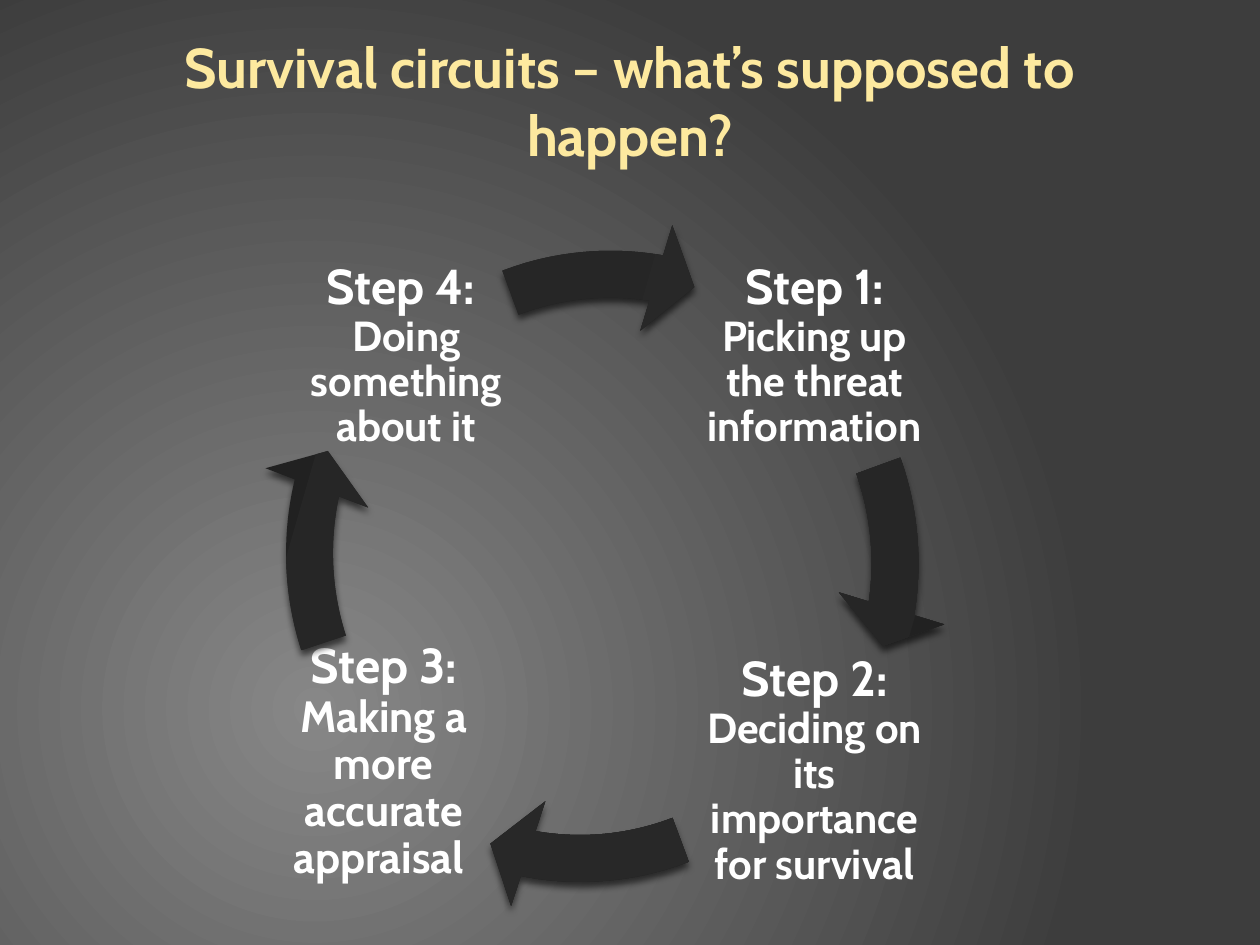
from lxml import etree
from pptx import Presentation
from pptx.dml.color import RGBColor
from pptx.enum.shapes import MSO_SHAPE as Shape
from pptx.enum.text import MSO_ANCHOR as Anchor, PP_ALIGN as Align
from pptx.oxml import parse_xml
from pptx.oxml.ns import nsdecls, qn
from pptx.util import Inches, Pt

ARROW_STOPS = [(0, "212121"), (30, "262626"), (45, "282828"),
               (55, "282828"), (73, "262626"), (100, "212121")]
SHADOW = (f'<a:outerShdw {nsdecls("a")} blurRad="{Pt(4)}" dist="{Pt(3)}" dir="5400000" '
          'rotWithShape="0"><a:srgbClr val="000000"><a:alpha val="58000"/></a:srgbClr></a:outerShdw>')


def set_gradient(fill, owner, stops, direction):
    """Fill with the (percent, colour) stops; direction is the a:lin or a:path markup."""
    fill.gradient()
    old = next(owner.iter(qn("a:gradFill")))
    marks = "".join(f'<a:gs pos="{percent * 1000}"><a:srgbClr val="{color}"/></a:gs>'
                    for percent, color in stops)
    new = parse_xml(f'<a:gradFill {nsdecls("a")} rotWithShape="1"><a:gsLst>{marks}</a:gsLst>'
                    f'{direction}</a:gradFill>')
    old.getparent().replace(old, new)


def set_font(font, size, color):
    font.name, font.size, font.bold = "Cabin", Pt(size), True
    font.color.rgb = RGBColor.from_string(color)


deck = Presentation()
deck.slide_width, deck.slide_height = Inches(10), Inches(7.5)
page = deck.slides.add_slide(deck.slide_layouts[5])
set_gradient(page.background.fill, page.element, [(0, "878787"), (100, "3D3D3D")],
             '<a:path path="circle"><a:fillToRect l="50000" t="100000" r="100000" b="50000"/></a:path>')

title = page.shapes.title
title.left, title.top, title.width, title.height = map(Inches, (0.75, 0.17, 8.5, 1.25))
frame = title.text_frame
frame.margin_left = frame.margin_right = 0
frame.margin_top = frame.margin_bottom = Inches(0.05)
frame.vertical_anchor = Anchor.MIDDLE
frame.text = "Survival circuits – what’s supposed to happen?"
frame.paragraphs[0].alignment = Align.CENTER
set_font(frame.paragraphs[0].font, 32, "FDE99F")

# heading, text, text size, text left and top, arrow left and top, arrow end and start angles
steps = [
    ("Step 1: ", "Picking up the threat information", 24, 5.51, 1.86, 2.15, 1.74, 5.479, 203.992),
    ("Step 2: ", "Deciding on its importance for survival", 24, 5.51, 5.15, 1.91, 1.79, 60.223, 41.769),
    ("Step 3: ", "Making a more accurate appraisal ", 25, 2.09, 5.08, 2.02, 1.66, 115.931, 96.979),
    ("Step 4: \v", "Doing something about it", 24, 2.27, 1.86, 2.15, 1.74, 167.479, 149.826),
]
for heading, text, size, left, top, arrow_left, arrow_top, end, start in steps:
    box = page.shapes.add_textbox(Inches(left), Inches(top), Inches(1.91), Inches(1.94))
    frame = box.text_frame
    frame.word_wrap = True
    frame.vertical_anchor = Anchor.MIDDLE
    frame.margin_left = frame.margin_right = Inches(0.04)
    frame.margin_top = frame.margin_bottom = Inches(0.04)
    para = frame.paragraphs[0]
    para.text = heading
    para.alignment, para.line_spacing = Align.CENTER, 0.9
    para.add_run().text = text
    for span in para.runs:
        set_font(span.font, 28, "FFFFFF")
    para.runs[-1].font.size = Pt(size)

    arrow = page.shapes.add_shape(Shape.CIRCULAR_ARROW, Inches(arrow_left), Inches(arrow_top),
                                  Inches(5.39), Inches(5.46))
    for index, value in enumerate((0.069, 4.657, end, start, 0.081)):
        arrow.adjustments[index] = value
    set_gradient(arrow.fill, arrow.element, ARROW_STOPS, '<a:lin ang="960000" scaled="1"/>')
    arrow.line.fill.background()
    arrow.shadow.inherit = False
    next(arrow.element.iter(qn("a:effectLst"))).append(etree.fromstring(SHADOW))

deck.save("out.pptx")
